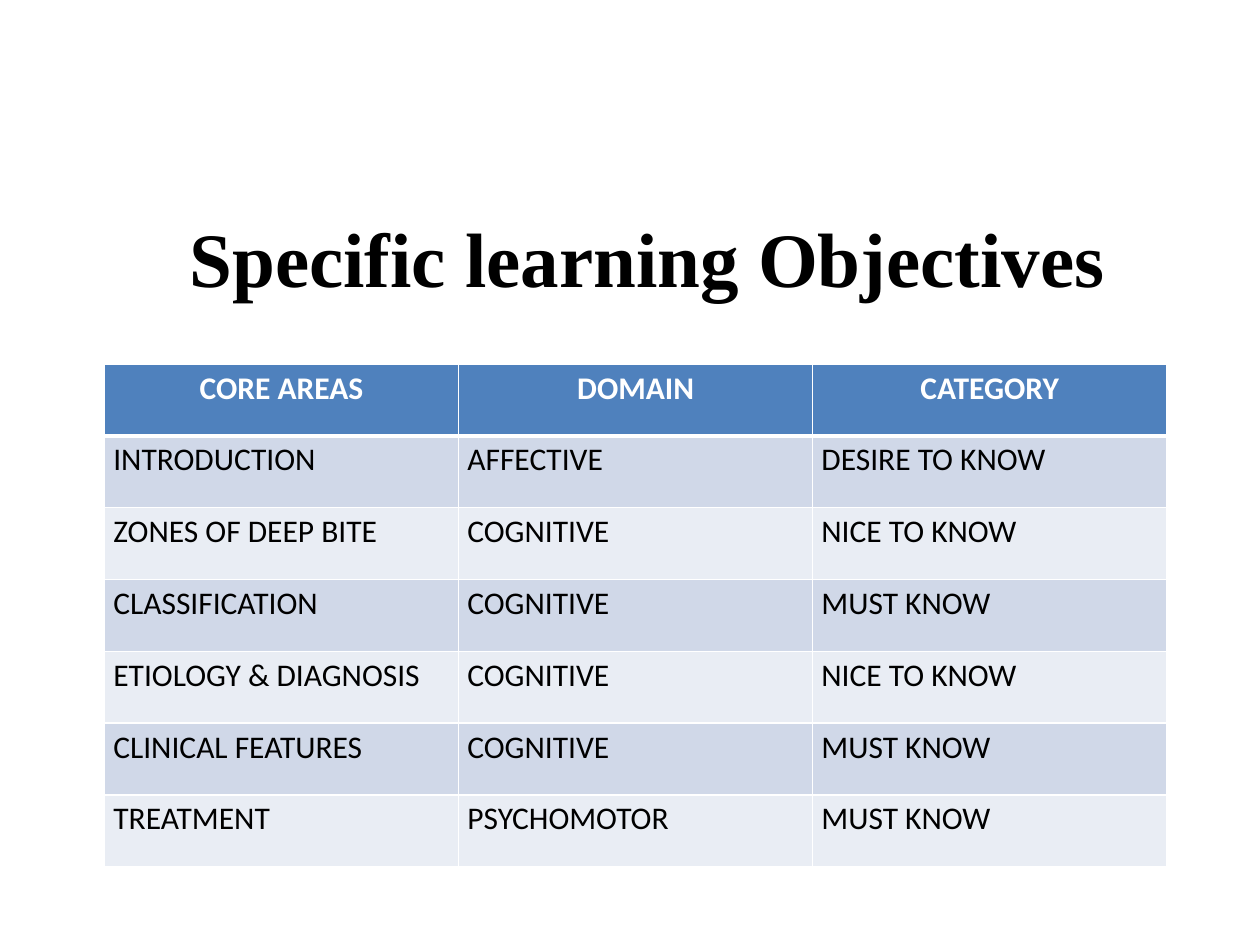
from lxml.etree import SubElement
from pptx import Presentation
from pptx.dml.color import RGBColor
from pptx.enum.text import MSO_ANCHOR, PP_ALIGN
from pptx.oxml.ns import qn
from pptx.util import Inches, Pt

TITLE = "Specific learning Objectives"
HEADER = ("CORE AREAS", "DOMAIN", "CATEGORY")
OBJECTIVES = [
    ("INTRODUCTION", "AFFECTIVE", "DESIRE TO KNOW"),
    ("ZONES OF DEEP BITE", "COGNITIVE", "NICE TO KNOW"),
    ("CLASSIFICATION", "COGNITIVE", "MUST KNOW"),
    ("ETIOLOGY & DIAGNOSIS", "COGNITIVE", "NICE TO KNOW"),
    ("CLINICAL FEATURES", "COGNITIVE", "MUST KNOW"),
    ("TREATMENT", "PSYCHOMOTOR", "MUST KNOW"),
]

COLORS = {
    "header": "4F81BD",
    "odd": "D0D8E8",
    "even": "E9EDF4",
    "white": "FFFFFF",
    "black": "000000",
}
TITLE_FONT = {"name": "Times New Roman", "size": Pt(44), "bold": True}
HEADER_FONT = {"name": "Calibri", "size": Pt(18), "bold": True}
BODY_FONT = {**HEADER_FONT, "bold": False}
MARGINS = {
    "margin_left": Inches(0.07),
    "margin_right": Inches(0.07),
    "margin_top": Inches(0.04),
    "margin_bottom": Inches(0.04),
}
TABLE_LEFT, TABLE_TOP = 0.83, 2.89
COLUMN_WIDTH, ROW_HEIGHT = 2.81, 0.57


def set_attributes(target, values):
    for name, value in values.items():
        setattr(target, name, value)


def write(text_frame, text, font, color, alignment):
    paragraph = text_frame.paragraphs[0]
    paragraph.alignment = alignment
    run = paragraph.add_run()
    run.text = text
    set_attributes(run.font, font)
    run.font.color.rgb = RGBColor.from_string(COLORS[color])


def add_borders(cell, top, bottom):
    properties = cell._tc.get_or_add_tcPr()
    for side, width in (("L", 1), ("R", 1), ("T", top), ("B", bottom)):
        line = SubElement(properties, qn(f"a:ln{side}"), w=str(Pt(width)))
        fill = SubElement(line, qn("a:solidFill"))
        SubElement(fill, qn("a:srgbClr"), val=COLORS["white"])


presentation = Presentation()
presentation.slide_width, presentation.slide_height = Inches(10), Inches(7.5)
slide = presentation.slides.add_slide(presentation.slide_layouts[6])

# Title
title_box = slide.shapes.add_textbox(Inches(1.34), Inches(1.59), Inches(7.6), Inches(0.9))
title_box.text_frame.word_wrap = True
title_box.text_frame.vertical_anchor = MSO_ANCHOR.MIDDLE
write(title_box.text_frame, TITLE, TITLE_FONT, "black", PP_ALIGN.CENTER)

# Objectives table
rows = [HEADER, *OBJECTIVES]
table = slide.shapes.add_table(
    len(rows), len(HEADER), Inches(TABLE_LEFT), Inches(TABLE_TOP),
    Inches(COLUMN_WIDTH * len(HEADER)), Inches(ROW_HEIGHT * len(rows)),
).table
for column in table.columns:
    column.width = Inches(COLUMN_WIDTH)
for row in table.rows:
    row.height = Inches(ROW_HEIGHT)

for row_index, texts in enumerate(rows):
    if row_index == 0:
        fill, font, color, alignment = "header", HEADER_FONT, "white", PP_ALIGN.CENTER
    else:
        fill = "odd" if row_index % 2 else "even"
        font, color, alignment = BODY_FONT, "black", PP_ALIGN.LEFT
    # A thick rule separates the header from the body
    top = 3 if row_index == 1 else 1
    bottom = 3 if row_index == 0 else 1
    for column_index, text in enumerate(texts):
        cell = table.cell(row_index, column_index)
        set_attributes(cell, MARGINS)
        add_borders(cell, top, bottom)
        cell.fill.solid()
        cell.fill.fore_color.rgb = RGBColor.from_string(COLORS[fill])
        write(cell.text_frame, text, font, color, alignment)

presentation.save("out.pptx")
